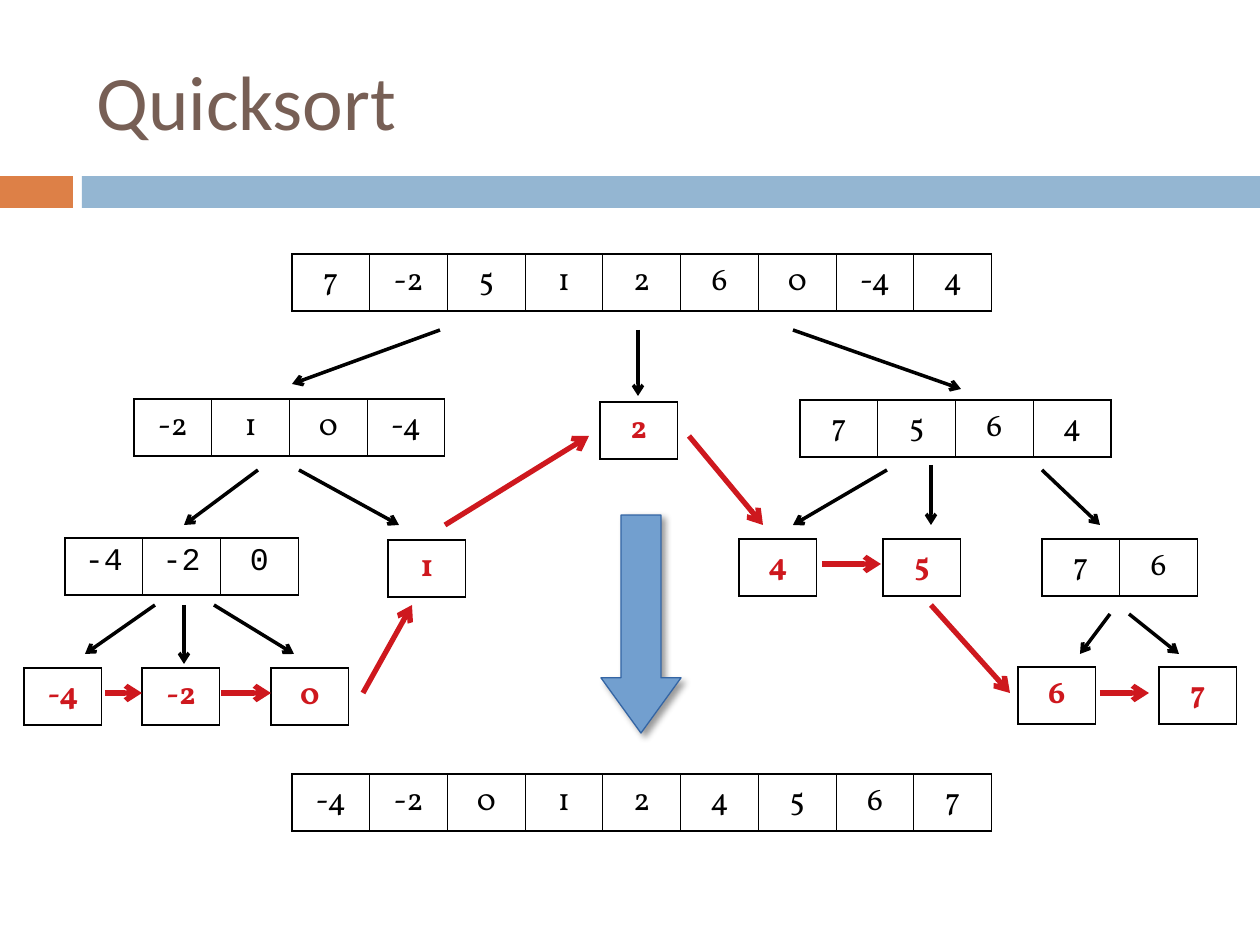
from typing import NamedTuple

from lxml import etree
from pptx import Presentation
from pptx.dml.color import RGBColor
from pptx.enum.shapes import MSO_CONNECTOR, MSO_SHAPE
from pptx.enum.text import MSO_ANCHOR, PP_ALIGN
from pptx.oxml.ns import qn
from pptx.util import Emu, Pt

RECTANGLE = MSO_SHAPE.RECTANGLE
DOWN_ARROW = MSO_SHAPE.DOWN_ARROW
STRAIGHT = MSO_CONNECTOR.STRAIGHT
CENTER = PP_ALIGN.CENTER
MIDDLE = MSO_ANCHOR.MIDDLE

PX_PER_INCH = 126
BLACK, RED = "000000", "CE181E"
CELL_W, CELL_H = 700 / 9, 57
BORDER_SIDES = ("lnL", "lnR", "lnT", "lnB")


class Numbers(NamedTuple):
    left: int
    top: int
    values: str
    font: str = "Vollkorn"


class Arrow(NamedTuple):
    x1: int
    y1: int
    x2: int
    y2: int


LISTS = [
    Numbers(292, 254, "7 -2 5 1 2 6 0 -4 4"),
    Numbers(134, 399, "-2 1 0 -4"),
    Numbers(800, 400, "7 5 6 4"),
    Numbers(65, 538, "-4 -2 0", "Courier New"),
    Numbers(1042, 539, "7 6"),
    Numbers(292, 774, "-4 -2 0 1 2 4 5 6 7"),
]
PIVOTS = [
    Numbers(600, 402, "2"),
    Numbers(388, 540, "1"),
    Numbers(739, 539, "4"),
    Numbers(883, 539, "5"),
    Numbers(24, 668, "-4"),
    Numbers(142, 668, "-2"),
    Numbers(271, 668, "0"),
    Numbers(1018, 667, "6"),
    Numbers(1159, 667, "7"),
]
SPLITS = [
    Arrow(440, 330, 292, 384),
    Arrow(638, 330, 638, 396),
    Arrow(793, 330, 961, 389),
    Arrow(299, 470, 399, 525),
    Arrow(258, 470, 184, 525),
    Arrow(887, 470, 793, 525),
    Arrow(931, 465, 931, 525),
    Arrow(1042, 470, 1100, 525),
    Arrow(1110, 614, 1080, 654),
    Arrow(1129, 614, 1179, 654),
    Arrow(184, 605, 184, 664),
    Arrow(214, 605, 294, 654),
    Arrow(155, 605, 85, 654),
]
SORTED_ORDER = [
    Arrow(105, 693, 142, 693),
    Arrow(221, 693, 271, 693),
    Arrow(363, 693, 412, 605),
    Arrow(445, 525, 589, 436),
    Arrow(689, 436, 763, 525),
    Arrow(822, 564, 881, 564),
    Arrow(931, 605, 1010, 693),
    Arrow(1100, 693, 1149, 693),
]


def px(length: float) -> Emu:
    return Emu(round(length * 914400 / PX_PER_INCH))


def rgb(color: str) -> RGBColor:
    return RGBColor.from_string(color)


def add_child(parent, tag: str, **attributes: str):
    child = etree.SubElement(parent, qn(tag))
    for key, value in attributes.items():
        child.set(key, value)
    return child


def style_run(run, color: str, **font_format) -> None:
    run.font.color.rgb = rgb(color)
    for key, value in font_format.items():
        setattr(run.font, key, value)


def add_border(cell) -> None:
    properties = cell._tc.get_or_add_tcPr()
    for side in BORDER_SIDES:
        line = add_child(properties, f"a:{side}", w=str(Pt(0.75)))
        add_child(add_child(line, "a:solidFill"), "a:srgbClr", val=BLACK)


def add_numbers(slide, numbers: Numbers, color: str, bold: bool) -> None:
    """Draw a one-row table with one number in each cell."""
    values = numbers.values.split()
    table = slide.shapes.add_table(
        1, len(values), px(numbers.left), px(numbers.top),
        px(CELL_W * len(values)), px(CELL_H)).table
    table.first_row = table.horz_banding = False
    for column, value in enumerate(values):
        table.columns[column].width = px(CELL_W)
        cell = table.cell(0, column)
        add_border(cell)
        cell.fill.background()
        paragraph = cell.text_frame.paragraphs[0]
        paragraph.alignment = CENTER
        run = paragraph.add_run()
        run.text = value
        style_run(run, color, name=numbers.font, size=Pt(18), bold=bold)


def add_arrow(slide, arrow: Arrow, color: str, width: int) -> None:
    connector = slide.shapes.add_connector(STRAIGHT, *map(px, arrow))
    connector.line.color.rgb = rgb(color)
    connector.line.width = Pt(width)
    add_child(connector.line._get_or_add_ln(), "a:tailEnd", type="arrow")
    add_child(connector._element.spPr, "a:effectLst")


def add_bar(slide, left: int, width: int, color: str) -> None:
    bar = slide.shapes.add_shape(RECTANGLE, px(left), px(176), px(width), px(32))
    bar.shadow.inherit = False
    bar.fill.solid()
    bar.fill.fore_color.rgb = rgb(color)
    bar.line.fill.background()


def add_title(slide, text: str) -> None:
    title = slide.shapes.add_textbox(px(84), px(32), px(1124), px(136))
    frame = title.text_frame
    frame.word_wrap = True
    frame.vertical_anchor = MIDDLE
    run = frame.paragraphs[0].add_run()
    run.text = text
    style_run(run, "775F55", name="Calibri", size=Pt(44))


def add_result_arrow(slide) -> None:
    """Draw the shadowed block arrow that points to the sorted list."""
    block = slide.shapes.add_shape(DOWN_ARROW, px(601), px(515), px(80), px(218))
    block.adjustments[0] = 0.5
    block.adjustments[1] = 0.69
    block.fill.solid()
    block.fill.fore_color.rgb = rgb("729FCF")
    block.line.color.rgb = rgb("3465A4")
    block.line.width = Pt(0)
    effects = add_child(block._element.spPr, "a:effectLst")
    shadow = add_child(effects, "a:outerShdw", blurRad=str(Pt(4)),
                       dist=str(Pt(3)), dir="2700000", rotWithShape="0")
    shade = add_child(shadow, "a:srgbClr", val=BLACK)
    add_child(shade, "a:alpha", val="40000")


def main() -> None:
    presentation = Presentation()
    presentation.slide_width, presentation.slide_height = px(1260), px(945)
    slide = presentation.slides.add_slide(presentation.slide_layouts[6])
    add_bar(slide, 0, 73, "DD8047")
    add_bar(slide, 82, 1178, "94B6D2")
    add_title(slide, "Quicksort")
    for numbers in LISTS:
        add_numbers(slide, numbers, BLACK, bold=False)
    for pivot in PIVOTS:
        add_numbers(slide, pivot, RED, bold=True)
    for split in SPLITS:
        add_arrow(slide, split, BLACK, 0)
    add_result_arrow(slide)
    for step in SORTED_ORDER:
        add_arrow(slide, step, RED, 3)
    presentation.save("out.pptx")


if __name__ == "__main__":
    main()
